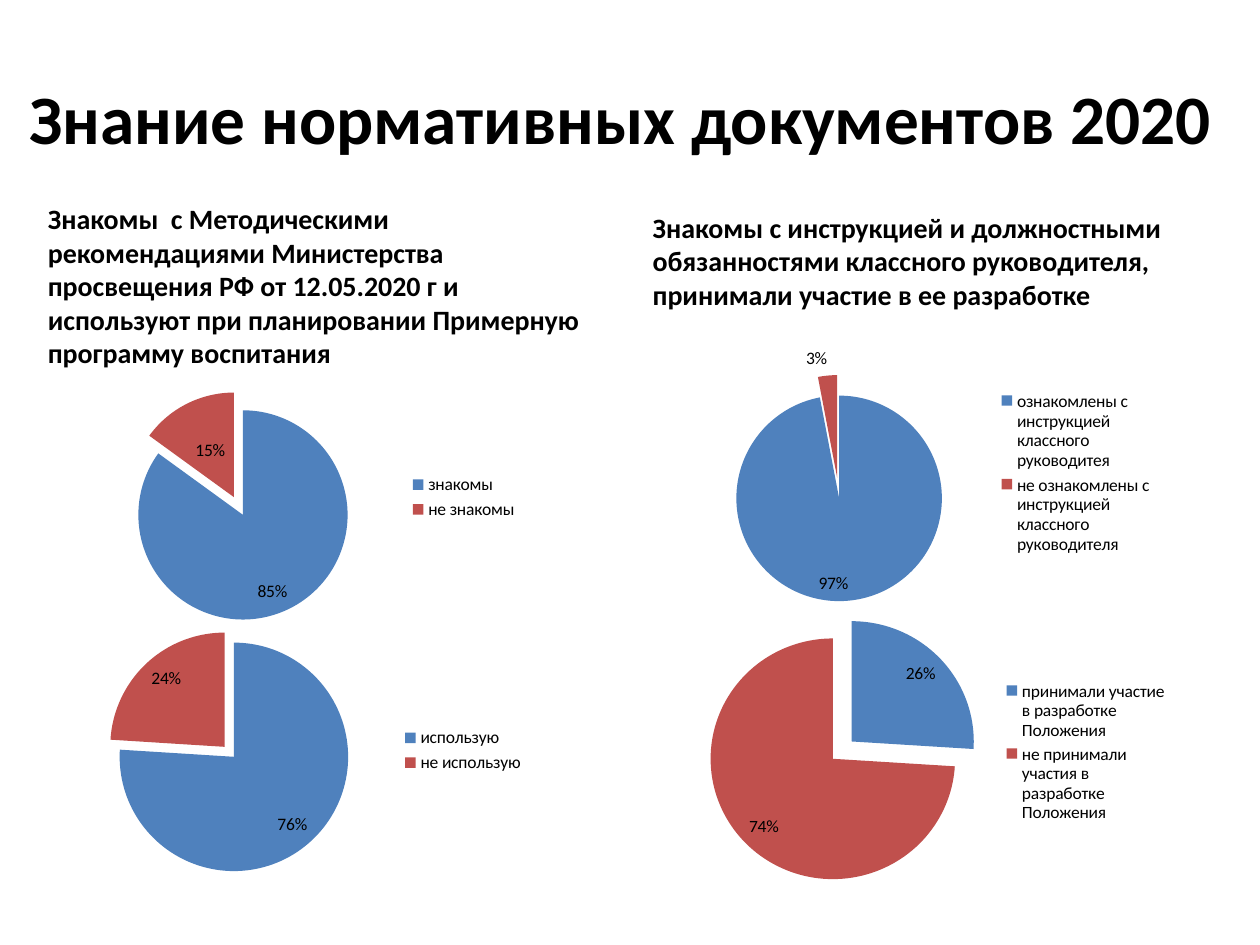
from dataclasses import dataclass

from lxml.etree import SubElement
from pptx import Presentation
from pptx.chart.data import CategoryChartData
from pptx.dml.color import RGBColor
from pptx.enum.chart import XL_CHART_TYPE as ChartType
from pptx.enum.chart import XL_LABEL_POSITION as LabelAt
from pptx.enum.chart import XL_LEGEND_POSITION as LegendAt
from pptx.enum.text import MSO_ANCHOR, PP_ALIGN
from pptx.oxml.ns import qn
from pptx.util import Emu, Inches, Pt

SLIDE_W, SLIDE_H = Inches(10), Inches(7.5)


@dataclass(frozen=True)
class Theme:
    font: str = "Calibri"
    ink: RGBColor = RGBColor(0, 0, 0)
    slices: tuple = (RGBColor(0x4F, 0x81, 0xBD), RGBColor(0xC0, 0x50, 0x4D))
    title_size: float = 39.6
    body_size: float = 16
    chart_size: float = 10


@dataclass(frozen=True)
class Box:
    """Percent of the slide's width (left, width) and height (top, height)."""
    left: float
    top: float
    width: float
    height: float

    def emu(self) -> tuple[Emu, Emu, Emu, Emu]:
        return (Emu(int(SLIDE_W * self.left / 100)), Emu(int(SLIDE_H * self.top / 100)),
                Emu(int(SLIDE_W * self.width / 100)), Emu(int(SLIDE_H * self.height / 100)))


@dataclass(frozen=True)
class Survey:
    """Answers in percent; the pie's centre and radius in percent of the slide."""
    box: Box
    center: tuple[float, float]
    radius: float
    answers: dict[str, int]
    pulled: int
    explosion: int
    pulled_label: LabelAt = LabelAt.INSIDE_END


THEME = Theme()
TITLE = "Знание нормативных документов 2020 "
TITLE_BOX = Box(1.2, 4, 96.1, 16.67)
COLUMNS = (
    ("Знакомы  с Методическими рекомендациями Министерства просвещения РФ "
     "от 12.05.2020 г и используют при планировании Примерную программу воспитания",
     Box(2.8, 20.67, 46.4, 68.67)),
    ("Знакомы с инструкцией и должностными обязанностями классного руководителя,  "
     "принимали участие в ее разработке",
     Box(50.8, 21.6, 44.2, 67.73)),
)
SURVEYS = (
    Survey(Box(5.1, 39.47, 37, 26.27), (19.29, 54.5), 6.98,
           {"знакомы": 85, "не знакомы": 15}, 1, 19, LabelAt.CENTER),
    Survey(Box(4.3, 65.73, 38.6, 27.33), (18.57, 80.1), 8.1,
           {"использую ": 76, "не использую ": 24}, 1, 12),
    Survey(Box(53.9, 36.4, 38.6, 27.33), (66.6, 52.75), 6.8,
           {"ознакомлены с инструкцией классного руководитея": 97,
            "не ознакомлены с инструкцией классного руководителя ": 3},
           1, 20, LabelAt.OUTSIDE_END),
    Survey(Box(53.9, 65.73, 39.8, 27.33), (66.1, 80.1), 8.02,
           {"принимали участие в разработке Положения ": 26,
            "не принимали участия в разработке Положения ": 74}, 0, 21),
)


def style_font(font, size: float, bold: bool = False) -> None:
    font.name, font.size, font.bold = THEME.font, Pt(size), bold
    font.color.rgb = THEME.ink


def fill_placeholder(holder, text: str, box: Box, size: float):
    holder.left, holder.top, holder.width, holder.height = box.emu()
    paragraph = holder.text_frame.paragraphs[0]
    run = paragraph.add_run()
    run.text = text
    style_font(run.font, size, bold=True)
    return paragraph


def remove_bullet(paragraph) -> None:
    properties = paragraph._p.get_or_add_pPr()
    properties.set("marL", "0")
    properties.set("indent", "0")
    SubElement(properties, qn("a:buNone"))


def place_pie(chart, survey: Survey) -> None:
    """Fix the plot area; it has to hold the pulled-out slice as well."""
    reach = survey.radius * (1 + survey.explosion / 100)
    reach_y = reach * SLIDE_W / SLIDE_H
    box, (x, y) = survey.box, survey.center
    shares = {"x": (x - reach - box.left) / box.width,
              "y": (y - reach_y - box.top) / box.height,
              "w": 2 * reach / box.width,
              "h": 2 * reach_y / box.height}
    plot_area = chart._chartSpace.chart.plotArea
    layout = plot_area.find(qn("c:layout"))
    if layout is None:
        layout = SubElement(plot_area, qn("c:layout"))
        plot_area.insert(0, layout)
    manual = SubElement(layout, qn("c:manualLayout"))
    SubElement(manual, qn("c:layoutTarget")).set("val", "inner")
    for side in "xy":
        SubElement(manual, qn(f"c:{side}Mode")).set("val", "edge")
    for name, share in shares.items():
        SubElement(manual, qn(f"c:{name}")).set("val", f"{share:.4f}")


def pull_slice(point, explosion: int) -> None:
    mark = SubElement(point._element if hasattr(point, "_element") else point, qn("c:explosion"))
    mark.set("val", str(explosion))


def draw_survey(slide, survey: Survey) -> None:
    data = CategoryChartData(number_format="0%")
    data.categories = list(survey.answers)
    data.add_series("Series 1", [percent / 100 for percent in survey.answers.values()])
    chart = slide.shapes.add_chart(ChartType.PIE, *survey.box.emu(), data).chart
    style_font(chart.font, THEME.chart_size)
    chart.has_title = False
    chart.has_legend = True
    chart.legend.position = LegendAt.RIGHT
    chart.legend.include_in_layout = False

    plot = chart.plots[0]
    plot.vary_by_categories = True
    series = plot.series[0]
    for index, color in enumerate(THEME.slices):
        fill = series.points[index].format.fill
        fill.solid()
        fill.fore_color.rgb = color
    pulled = series._element.findall(qn("c:dPt"))[survey.pulled]
    explosion = SubElement(pulled, qn("c:explosion"))
    explosion.set("val", str(survey.explosion))
    pulled.find(qn("c:spPr")).addprevious(explosion)

    labels = series.data_labels
    labels.show_value = True
    labels.number_format, labels.number_format_is_linked = "0%", False
    labels.position = LabelAt.INSIDE_END
    style_font(labels.font, THEME.chart_size)
    if survey.pulled_label != LabelAt.INSIDE_END:
        series.points[survey.pulled].data_label.position = survey.pulled_label
    place_pie(chart, survey)


def main() -> None:
    deck = Presentation()
    deck.slide_width, deck.slide_height = SLIDE_W, SLIDE_H
    slide = deck.slides.add_slide(deck.slide_layouts.get_by_name("Two Content"))

    heading = fill_placeholder(slide.shapes.title, TITLE, TITLE_BOX, THEME.title_size)
    heading.alignment = PP_ALIGN.CENTER
    slide.shapes.title.text_frame.vertical_anchor = MSO_ANCHOR.MIDDLE
    for index, (text, box) in enumerate(COLUMNS, start=1):
        topic = fill_placeholder(slide.placeholders[index], text, box, THEME.body_size)
        topic.space_before = Pt(THEME.body_size * 0.2)
        remove_bullet(topic)
    for survey in SURVEYS:
        draw_survey(slide, survey)
    deck.save("out.pptx")


if __name__ == "__main__":
    main()
